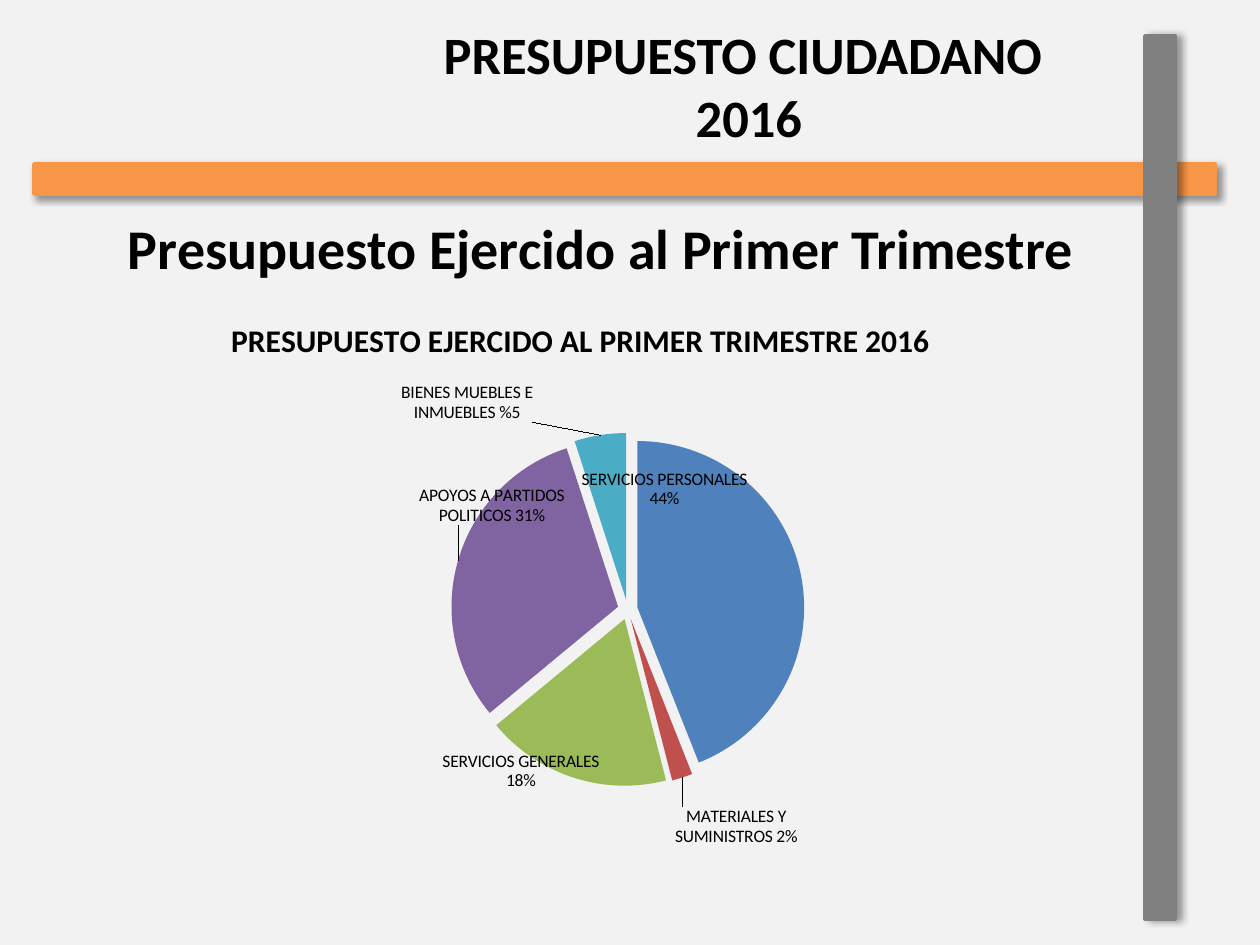
from lxml.etree import SubElement
from pptx import Presentation
from pptx.chart.data import CategoryChartData
from pptx.dml.color import RGBColor
from pptx.enum.chart import XL_CHART_TYPE as CT, XL_LABEL_POSITION as LP
from pptx.enum.shapes import MSO_SHAPE
from pptx.enum.text import MSO_ANCHOR, PP_ALIGN
from pptx.oxml import parse_xml
from pptx.oxml.ns import nsdecls, qn
from pptx.util import Pt

PX = 914400 // 126
FONT = "Calibri"
COLORS = {"bg": "F2F2F2", "text": "000000", "orange": "F79646", "gray": "808080"}
CHART = (108, 295, 945, 552)
CHART_TITLE = "PRESUPUESTO EJERCIDO AL PRIMER TRIMESTRE 2016"
# value, slice colour, label, label shift in px
SLICES = [
    (44, "4F81BD", "SERVICIOS PERSONALES 44%", (-226, -66)),
    (2, "C0504D", "MATERIALES Y SUMINISTROS 2%", (-14, 22)),
    (18, "9BBB59", "SERVICIOS GENERALES 18%", (29, -34)),
    (31, "8064A2", "APOYOS A PARTIDOS POLITICOS 31%", (118, -35)),
    (5, "4BACC6", "BIENES MUEBLES E INMUEBLES %5", (-68, -7)),
]


def style(font, size, bold=False):
    font.name, font.size, font.bold = FONT, Pt(size), bold
    font.color.rgb = RGBColor.from_string(COLORS["text"])


def manual_layout(**values):
    layout = parse_xml(f"<c:layout {nsdecls('c')}><c:manualLayout/></c:layout>")
    for tag, val in values.items():
        SubElement(layout[0], qn(f"c:{tag}")).set("val", str(val))
    return layout


prs = Presentation()
prs.slide_width, prs.slide_height = 1260 * PX, 945 * PX
s = prs.slides.add_slide(prs.slide_layouts[5])
s.background.fill.solid()
s.background.fill.fore_color.rgb = RGBColor.from_string(COLORS["bg"])

# Crossing bars with soft shadows
for color, box, angle in [("orange", (34, 164, 1181, 30), 45),
                          ("gray", (1145, 36, 30, 883), 0)]:
    sp = s.shapes.add_shape(MSO_SHAPE.RECTANGLE, *(v * PX for v in box))
    rgb = RGBColor.from_string(COLORS[color])
    sp.fill.solid()
    sp.fill.fore_color.rgb = rgb
    sp.line.color.rgb = rgb
    sp.line.width = Pt(2)
    sp.shadow.inherit = False
    effects = sp.element.spPr.find(qn("a:effectLst"))
    effects.append(parse_xml(
        f'<a:outerShdw {nsdecls("a")} blurRad="{Pt(4)}" dist="{Pt(3)}" '
        f'dir="{angle * 60000}" algn="tl" rotWithShape="0"><a:srgbClr val="000000">'
        '<a:alpha val="40000"/></a:srgbClr></a:outerShdw>'))

# Title and subtitle
title = s.shapes.title
title.left, title.top, title.width, title.height = (v * PX for v in (362, 16, 774, 118))
subtitle = s.shapes.add_textbox(*(v * PX for v in (20, 207, 1162, 81)))
for sp, lines, size in [(title, ["PRESUPUESTO CIUDADANO ", "2016"], 30),
                        (subtitle, ["Presupuesto Ejercido al Primer Trimestre"], 32)]:
    tf = sp.text_frame
    tf.word_wrap = True
    tf.vertical_anchor = MSO_ANCHOR.TOP
    p = tf.paragraphs[0]
    p.alignment = PP_ALIGN.CENTER
    for i, line in enumerate(lines):
        if i:
            p.add_line_break()
        r = p.add_run()
        r.text = line
        style(r.font, size, True)

# Pie chart
data = CategoryChartData()
data.categories = [str(i + 1) for i in range(len(SLICES))]
data.add_series(CHART_TITLE, [row[0] for row in SLICES])
chart = s.shapes.add_chart(CT.PIE, *(v * PX for v in CHART), data).chart
chart.has_legend = False
style(chart.font, 10)
chart.has_title = True
r = chart.chart_title.text_frame.paragraphs[0].add_run()
r.text = CHART_TITLE
style(r.font, 18, True)

plot = chart.plots[0]
plot.vary_by_categories = True
area = chart.element.chart.plotArea
for old in area.findall(qn("c:layout")):
    area.remove(old)
area.insert(0, manual_layout(layoutTarget="inner", xMode="edge", yMode="edge",
                             x=0.36, y=0.25, w=0.38, h=0.64))

# Slices and their labels
series = plot.series[0]
series.format.line.fill.background()
explosion = parse_xml(f'<c:explosion {nsdecls("c")} val="6"/>')
series.format.line  # keeps spPr ahead of the explosion
series._element.find(qn("c:spPr")).addnext(explosion)
for i, (_, color, text, (dx, dy)) in enumerate(SLICES):
    point = series.points[i]
    point.format.fill.solid()
    point.format.fill.fore_color.rgb = RGBColor.from_string(color)
    label = point.data_label
    r = label.text_frame.paragraphs[0].add_run()
    r.text = text
    style(r.font, 10)
    label.position = LP.OUTSIDE_END
    dLbl = series._element.find(qn("c:dLbls")).findall(qn("c:dLbl"))[i]
    dLbl.find(qn("c:idx")).addnext(
        manual_layout(x=round(dx / CHART[2], 2), y=round(dy / CHART[3], 2)))

prs.save("out.pptx")
